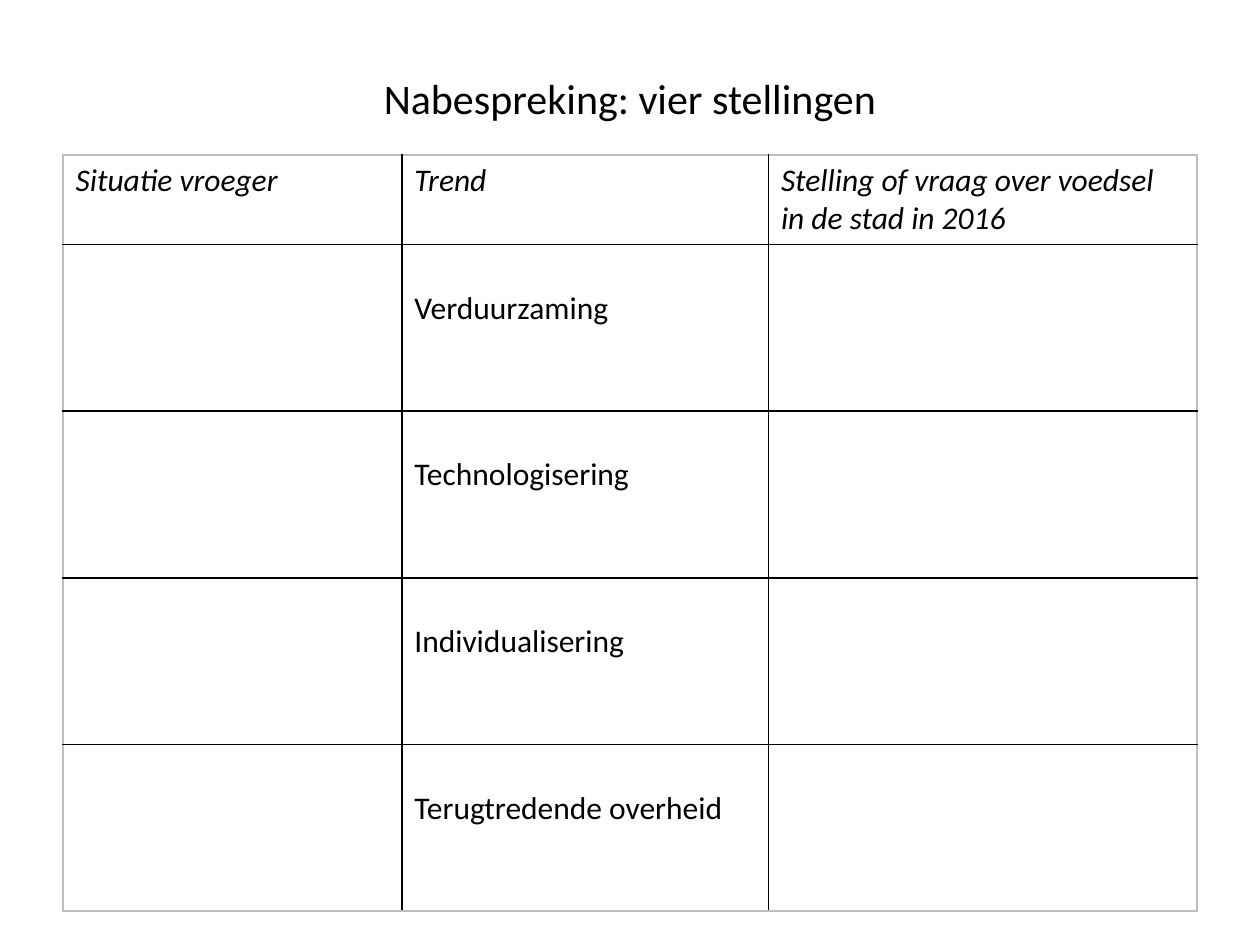
"""Build a slide with a title and a table of four trends."""
from lxml.etree import SubElement
from pptx import Presentation
from pptx.dml.color import RGBColor
from pptx.enum.text import MSO_ANCHOR as Anchor, PP_ALIGN as Align
from pptx.oxml.ns import qn
from pptx.util import Cm, Pt

HEADERS = ["Situatie vroeger", "Trend", "Stelling of vraag over voedsel in de stad in 2016"]
TRENDS = ["Verduurzaming", "Technologisering", "Individualisering", "Terugtredende overheid"]
COLUMN_WIDTHS = [6.83, 7.39, 8.64]
HEADER_HEIGHT, TREND_HEIGHT = 1.8, 3.36


def color(value):
    return RGBColor.from_string(value)


def write(frame, text, size=18, font="Calibri", ink="000000", italic=False, align=Align.LEFT):
    para = frame.paragraphs[0]
    para.alignment = align
    span = para.add_run()
    span.text = text
    span.font.size = Pt(size)
    span.font.name = font
    span.font.italic = italic
    span.font.color.rgb = color(ink)


class SlideBuilder:
    ink = "000000"
    paper = "FFFFFF"
    frame_line = "BFBFBF"
    line_width = 1

    def __init__(self, deck):
        self.page = deck.slides.add_slide(deck.slide_layouts[5])

    def title(self, text, left, top, width, height):
        box = self.page.shapes.title
        box.left, box.top, box.width, box.height = map(Cm, (left, top, width, height))
        box.text_frame.vertical_anchor = Anchor.MIDDLE
        write(box.text_frame, text, size=24, ink=self.ink, align=Align.CENTER)

    def border(self, cell, side, line_color):
        properties = cell._tc.get_or_add_tcPr()
        line = SubElement(properties, qn(f"a:ln{side}"), w=str(Pt(self.line_width)))
        fill = SubElement(line, qn("a:solidFill"))
        SubElement(fill, qn("a:srgbClr"), val=line_color)

    def table(self, rows, left, top, widths, heights):
        size = Cm(sum(widths)), Cm(sum(heights))
        shape = self.page.shapes.add_table(len(rows), len(widths), Cm(left), Cm(top), *size)
        table = shape.table
        table.first_row = table.horz_banding = False
        for column, width in zip(table.columns, widths):
            column.width = Cm(width)
        for row, height in zip(table.rows, heights):
            row.height = Cm(height)
        for r, texts in enumerate(rows):
            for c, text in enumerate(texts):
                cell = table.cell(r, c)
                edges = {"L": c == 0, "R": c == len(widths) - 1,
                         "T": r == 0, "B": r == len(rows) - 1}
                for side, outer in edges.items():
                    self.border(cell, side, self.frame_line if outer else self.ink)
                cell.fill.solid()
                cell.fill.fore_color.rgb = color(self.paper)
                if text:
                    cell.margin_top = Cm(0.9 if r else 0.13)
                    write(cell.text_frame, text, ink=self.ink, italic=r == 0)


def main():
    deck = Presentation()
    deck.slide_width, deck.slide_height = Cm(25.4), Cm(19.05)
    builder = SlideBuilder(deck)
    builder.title("Nabespreking: vier stellingen", 1.27, 0, 22.86, 3.94)
    rows = [HEADERS] + [["", trend, ""] for trend in TRENDS]
    heights = [HEADER_HEIGHT] + [TREND_HEIGHT] * len(TRENDS)
    builder.table(rows, 1.27, 3.12, COLUMN_WIDTHS, heights)
    deck.save("out.pptx")


if __name__ == "__main__":
    main()
